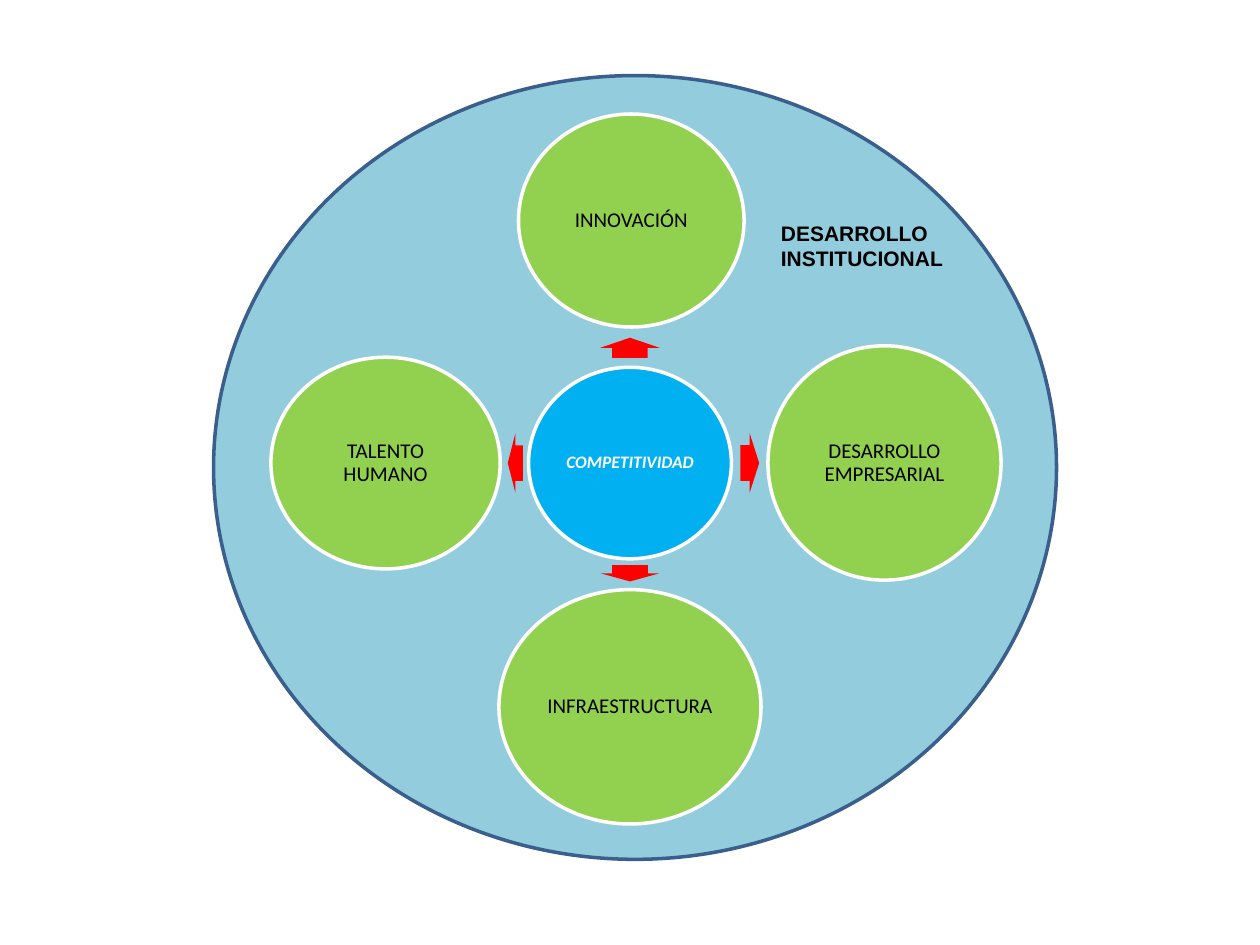
from pptx import Presentation
from pptx.dml.color import RGBColor
from pptx.enum.shapes import MSO_SHAPE
from pptx.enum.text import MSO_ANCHOR, PP_ALIGN
from pptx.util import Inches, Pt

OVAL, ARROW = MSO_SHAPE.OVAL, MSO_SHAPE.RIGHT_ARROW
MIDDLE, CENTER = MSO_ANCHOR.MIDDLE, PP_ALIGN.CENTER
WIDTH, HEIGHT = 10, 7.5
CX, CY = WIDTH * 0.5, HEIGHT * 0.49  # centre of the diagram
GREEN, BLUE, RED, WHITE, BLACK = "92D050", "00B0F0", "FF0000", "FFFFFF", "000000"

prs = Presentation()
prs.slide_width, prs.slide_height = Inches(WIDTH), Inches(HEIGHT)
s = prs.slides.add_slide(prs.slide_layouts[6])


def add_centered(kind, x, y, w, h, fill, line=None):
    sp = s.shapes.add_shape(kind, Inches(x - w / 2), Inches(y - h / 2), Inches(w), Inches(h))
    sp.shadow.inherit = False
    sp.fill.solid()
    sp.fill.fore_color.rgb = RGBColor.from_string(fill)
    if line:
        sp.line.color.rgb = RGBColor.from_string(line)
        sp.line.width = Pt(2)
    else:
        sp.line.fill.background()
    return sp


def add_text(p, text, font, size, color, bold=False, italic=False):
    r = p.add_run()
    r.text = text
    r.font.name, r.font.size = font, Pt(size)
    r.font.bold, r.font.italic = bold, italic
    r.font.color.rgb = RGBColor.from_string(color)


# Surrounding institutional oval
add_centered(OVAL, 5.04, 3.71, 6.69, 6.22, "93CDDD", "3A5F8C")

# Hub and its four factors: text, centre, size, fill, text size, text colour
circles = [
    ("COMPETITIVIDAD", CX, CY, 1.61, 1.52, BLUE, 10, WHITE),
    ("INNOVACIÓN", CX + 0.01, 1.75, 1.79, 1.69, GREEN, 12, BLACK),
    ("DESARROLLO EMPRESARIAL", 7.02, CY, 1.85, 1.86, GREEN, 12, BLACK),
    ("INFRAESTRUCTURA", CX, 5.61, 2.08, 1.86, GREEN, 12, BLACK),
    ("TALENTO HUMANO", 3.06, CY, 1.82, 1.68, GREEN, 12, BLACK),
]
for text, x, y, w, h, fill, size, color in circles:
    hub = fill == BLUE
    tf = add_centered(OVAL, x, y, w, h, fill, WHITE).text_frame
    tf.word_wrap = True
    tf.vertical_anchor = MIDDLE
    tf.margin_left = tf.margin_right = tf.margin_top = tf.margin_bottom = Inches(0.02)
    p = tf.paragraphs[0]
    p.alignment, p.line_spacing = CENTER, 0.9
    add_text(p, text, "Calibri", size, color, bold=hub, italic=hub)

# Arrows from the hub outwards: centre, length, rotation
arrows = [
    (CX, 2.76, 0.16, 270),
    (5.95, CY, 0.15, 0),
    (CX, 4.55, 0.13, 90),
    (4.09, CY, 0.12, 180),
]
for x, y, length, rotation in arrows:
    sp = add_centered(ARROW, x, y, length, 0.47, RED)
    sp.adjustments[0], sp.adjustments[1] = 0.6, 0.5
    sp.rotation = rotation

# Label of the surrounding oval
tf = s.shapes.add_textbox(Inches(6.1), Inches(1.7), Inches(2.36), Inches(0.5)).text_frame
tf.word_wrap = True
add_text(tf.paragraphs[0], "DESARROLLO INSTITUCIONAL", "Arial", 12, BLACK, bold=True)

prs.save("out.pptx")
